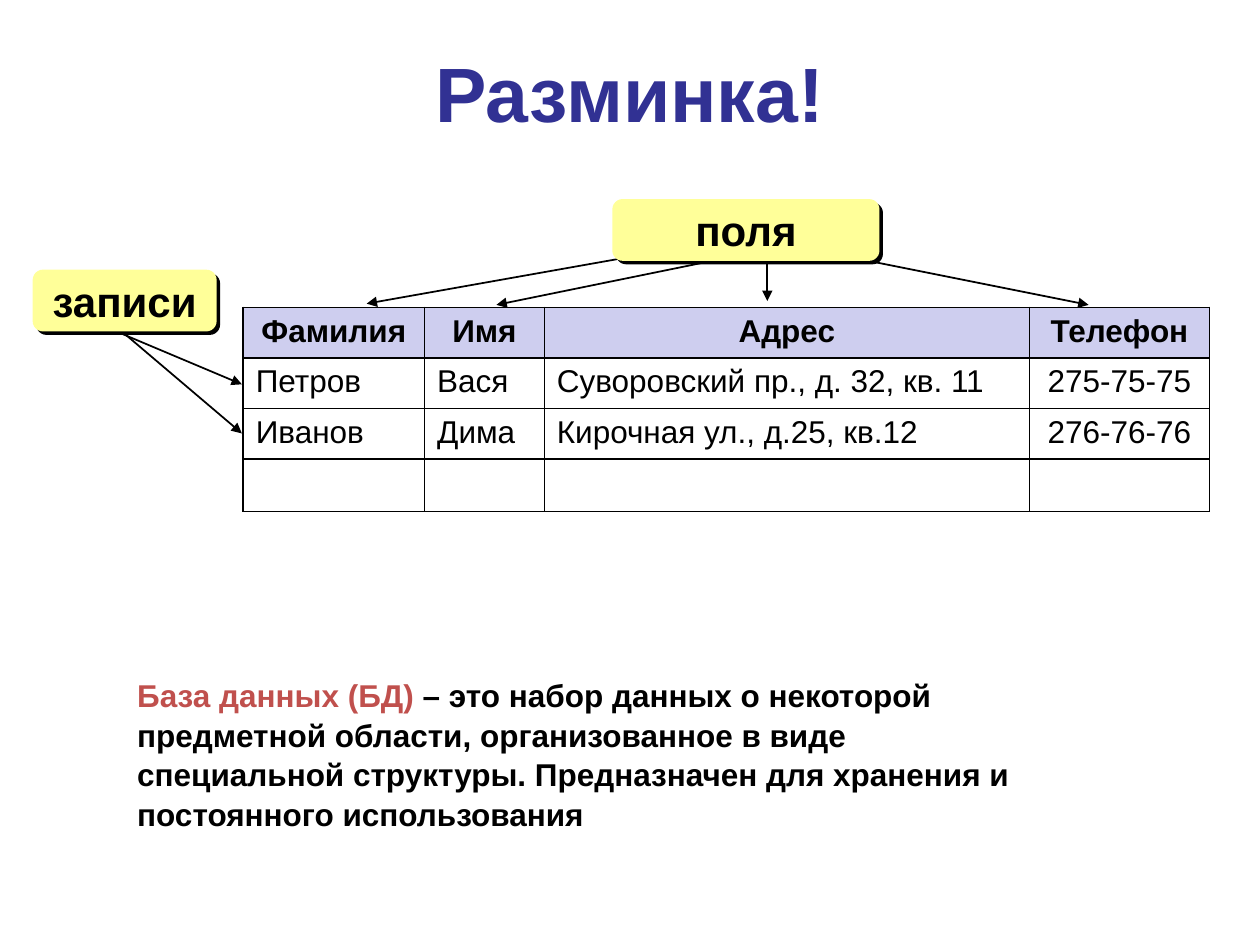
from dataclasses import dataclass

from lxml.etree import SubElement
from pptx import Presentation
from pptx.dml.color import RGBColor
from pptx.enum.shapes import MSO_CONNECTOR as Conn, MSO_SHAPE as Shape
from pptx.enum.text import MSO_ANCHOR as Anchor, PP_ALIGN as Align
from pptx.oxml import parse_xml
from pptx.oxml.ns import nsdecls, qn
from pptx.util import Inches, Pt


@dataclass(frozen=True)
class Theme:
    font: str = "Arial"
    title: str = "313193"
    ink: str = "000000"
    accent: str = "C0504D"
    header: str = "CECEEF"
    label: str = "FFFF99"
    title_size: int = 44
    label_size: int = 24
    body_size: int = 18


@dataclass(frozen=True)
class Label:
    text: str
    box: tuple[float, float, float, float]
    arrows: tuple[tuple[float, float, float, float], ...]


THEME = Theme()
LABELS = (
    Label("записи", (0.26, 2.14, 1.46, 0.49),
          ((0.97, 2.65, 1.92, 3.05), (0.99, 2.65, 1.92, 3.44))),
    Label("поля", (4.86, 1.58, 2.12, 0.49),
          ((5.84, 1.89, 2.91, 2.41), (6.09, 1.92, 6.09, 2.39),
           (5.9, 2.02, 3.94, 2.42), (6.34, 1.96, 8.64, 2.42))),
)
COLUMNS = (1.44, 0.95, 3.85, 1.43)
ROW_HEIGHTS = (0.4, 0.4, 0.4, 0.42)
ROWS = (
    ("Фамилия", "Имя", "Адрес", "Телефон"),
    ("Петров", "Вася", "Суворовский пр., д. 32, кв. 11", "275-75-75"),
    ("Иванов", "Дима", "Кирочная ул., д.25, кв.12", "276-76-76"),
    ("", "", "", ""),
)
DEFINITION = (
    ("База данных (БД) ", THEME.accent),
    ("– это набор данных о некоторой предметной области, организованное в виде "
     "специальной структуры. Предназначен для хранения и постоянного "
     "использования", THEME.ink),
)


def add_run(p, text: str, size: int, color: str, bold: bool = True) -> None:
    r = p.add_run()
    r.text = text
    for name, value in {"name": THEME.font, "size": Pt(size), "bold": bold}.items():
        setattr(r.font, name, value)
    r.font.color.rgb = RGBColor.from_string(color)


def add_text(slide, box: tuple, runs: tuple, size: int, **formats):
    sp = slide.shapes.add_textbox(*map(Inches, box))
    sp.text_frame.word_wrap = True
    p = sp.text_frame.paragraphs[0]
    for name, value in formats.items():
        setattr(p, name, value)
    for text, color in runs:
        add_run(p, text, size, color)
    return sp


def add_arrow(slide, ends: tuple[float, float, float, float]) -> None:
    line = slide.shapes.add_connector(Conn.STRAIGHT, *map(Inches, ends))
    line.line.width = Pt(1)
    line.line.color.rgb = RGBColor.from_string(THEME.ink)
    SubElement(line.line._get_or_add_ln(), qn("a:tailEnd"), type="triangle")
    SubElement(line._element.spPr, qn("a:effectLst"))


def add_label(slide, label: Label) -> None:
    for ends in label.arrows:
        add_arrow(slide, ends)
    sp = slide.shapes.add_shape(Shape.ROUNDED_RECTANGLE, *map(Inches, label.box))
    sp.fill.solid()
    sp.fill.fore_color.rgb = RGBColor.from_string(THEME.label)
    sp.line.fill.background()
    sp._element.spPr.append(parse_xml(
        f'<a:effectLst {nsdecls("a")}>'
        f'<a:outerShdw dist="{Pt(2.8)}" dir="2700000" algn="ctr" rotWithShape="0">'
        f'<a:srgbClr val="{THEME.ink}"/></a:outerShdw></a:effectLst>'))
    tf = sp.text_frame
    for name, value in {"word_wrap": False, "vertical_anchor": Anchor.MIDDLE}.items():
        setattr(tf, name, value)
    p = tf.paragraphs[0]
    p.alignment = Align.CENTER
    add_run(p, label.text, THEME.label_size, THEME.ink)


def add_borders(cell) -> None:
    tc_pr = cell._tc.get_or_add_tcPr()
    for index, side in enumerate(("lnL", "lnR", "lnT", "lnB")):
        tc_pr.insert(index, parse_xml(
            f'<a:{side} {nsdecls("a")} w="{Pt(1)}"><a:solidFill>'
            f'<a:srgbClr val="{THEME.ink}"/></a:solidFill></a:{side}>'))


def fill_cell(cell, text: str, is_header: bool, centered: bool) -> None:
    if is_header:
        cell.fill.solid()
        cell.fill.fore_color.rgb = RGBColor.from_string(THEME.header)
    else:
        cell.fill.background()
    add_borders(cell)
    p = cell.text_frame.paragraphs[0]
    p.alignment = Align.CENTER if centered else Align.LEFT
    p.font.size = Pt(THEME.body_size)
    if text:
        add_run(p, text, THEME.body_size, THEME.ink, is_header)


def add_records(slide) -> None:
    box = (1.93, 2.44, sum(COLUMNS), sum(ROW_HEIGHTS))
    table = slide.shapes.add_table(len(ROWS), len(COLUMNS), *map(Inches, box)).table
    for column, width in zip(table.columns, COLUMNS):
        column.width = Inches(width)
    for row, height in zip(table.rows, ROW_HEIGHTS):
        row.height = Inches(height)
    for i, values in enumerate(ROWS):
        for j, text in enumerate(values):
            is_header = i == 0
            centered = is_header or j == len(COLUMNS) - 1
            fill_cell(table.cell(i, j), text, is_header, centered)


def main() -> None:
    prs = Presentation()
    prs.slide_width, prs.slide_height = Inches(10), Inches(7.5)
    slide = prs.slides.add_slide(prs.slide_layouts[6])
    title = add_text(slide, (0.5, 0.3, 9, 0.85), (("Разминка!", THEME.title),),
                     THEME.title_size, alignment=Align.CENTER)
    title.text_frame.vertical_anchor = Anchor.MIDDLE
    add_records(slide)
    for label in LABELS:
        add_label(slide, label)
    add_text(slide, (0.99, 5.3, 7.45, 1.31), DEFINITION, THEME.body_size,
             line_spacing=1.05)
    prs.save("out.pptx")


if __name__ == "__main__":
    main()
